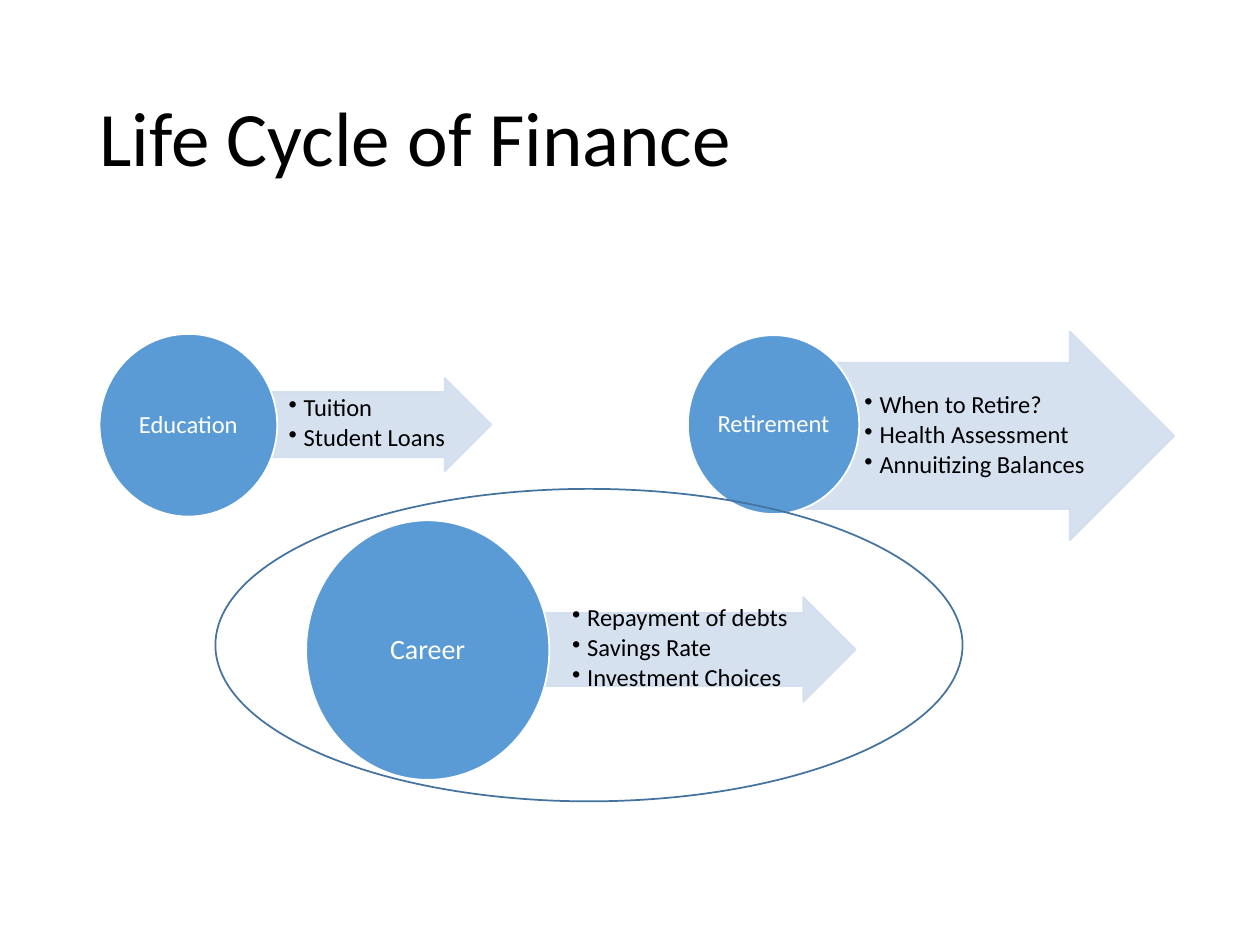
from lxml.etree import SubElement
from pptx import Presentation
from pptx.dml.color import RGBColor
from pptx.enum.shapes import MSO_SHAPE
from pptx.enum.text import MSO_ANCHOR, PP_ALIGN
from pptx.oxml.ns import qn
from pptx.util import Inches, Pt

# stage, circle text size, circle box, arrow box, bullet box, bullets
STAGES = [
    ("Education", 14, (0.79, 2.65, 1.41, 1.45), (1.7, 3, 2.2, 0.74),
     (2.25, 3.11, 1.39, 0.51), ["Tuition", "Student Loans"]),
    ("Career", 16, (2.43, 4.13, 1.93, 2.06), (3.74, 4.74, 3.05, 0.83),
     (4.5, 4.86, 2, 0.58),
     ["Repayment of debts", "Savings Rate", "Investment Choices"]),
    ("Retirement", 14, (5.46, 2.66, 1.36, 1.42), (6, 2.63, 3.32, 1.66),
     (6.82, 2.88, 1.91, 1.16),
     ["When to Retire?", "Health Assessment", "Annuitizing Balances"]),
]


def rgb(value):
    return RGBColor.from_string(value)


def inches(box):
    return [Inches(length) for length in box]


class LifeCyclePage:
    """Holds the style and the slide being built."""

    font = "Calibri"
    black, white = "000000", "FFFFFF"
    circle_blue, arrow_blue, outline_blue = "5B9BD5", "D2DEEF", "43739E"

    def __init__(self, deck):
        self.page = deck.slides.add_slide(deck.slide_layouts[5])
        background = self.page.background.fill
        background.solid()
        background.fore_color.rgb = rgb(self.white)

    def add_text(self, para, text, size, color, align=PP_ALIGN.LEFT, after=0):
        para.alignment = align
        para.line_spacing = 0.9
        para.space_after = Pt(after)
        span = para.add_run()
        span.text = text
        span.font.name = self.font
        span.font.size = Pt(size)
        span.font.color.rgb = rgb(color)

    def frame(self, shape, left, right):
        """Prepare a middle-anchored text frame with narrow margins."""
        frame = shape.text_frame
        frame.word_wrap = True
        frame.vertical_anchor = MSO_ANCHOR.MIDDLE
        frame.margin_left, frame.margin_right = Inches(left), Inches(right)
        frame.margin_top = frame.margin_bottom = Inches(0.01)
        return frame

    def title(self, text, box):
        title = self.page.shapes.title
        title.left, title.top, title.width, title.height = inches(box)
        title.text_frame.vertical_anchor = MSO_ANCHOR.MIDDLE
        self.add_text(title.text_frame.paragraphs[0], text, 44, self.black)

    def shape(self, shapes, preset, box, fill, line):
        shape = shapes.add_shape(preset, *inches(box))
        shape.shadow.inherit = False
        if fill:
            shape.fill.solid()
            shape.fill.fore_color.rgb = rgb(fill)
        else:
            shape.fill.background()
        shape.line.color.rgb = rgb(line)
        shape.line.width = Pt(1)
        return shape

    def arrow(self, shapes, box):
        arrow = self.shape(shapes, MSO_SHAPE.RIGHT_ARROW, box,
                           self.arrow_blue, self.arrow_blue)
        arrow.adjustments[0] = 0.7
        arrow.adjustments[1] = 0.5
        for color in arrow._element.spPr.iter(qn("a:srgbClr")):
            SubElement(color, qn("a:alpha"), val="90000")

    def bullets(self, shapes, box, items):
        frame = self.frame(shapes.add_textbox(*inches(box)), 0.04, 0.02)
        for index, item in enumerate(items):
            para = frame.add_paragraph() if index else frame.paragraphs[0]
            para.level = 1
            self.add_text(para, item, 14, self.black, after=2)
            properties = para._p.get_or_add_pPr()
            properties.set("marL", str(Inches(0.12)))
            properties.set("indent", str(Inches(-0.12)))
            SubElement(properties, qn("a:buChar"), char="•")

    def circle(self, shapes, box, label, size):
        circle = self.shape(shapes, MSO_SHAPE.OVAL, box,
                            self.circle_blue, self.white)
        frame = self.frame(circle, 0.01, 0.01)
        self.add_text(frame.paragraphs[0], label, size, self.white,
                      PP_ALIGN.CENTER)

    def diagram(self, stages):
        shapes = self.page.shapes.add_group_shape().shapes
        for label, size, circle_box, arrow_box, text_box, items in stages:
            self.arrow(shapes, arrow_box)
            self.bullets(shapes, text_box, items)
            self.circle(shapes, circle_box, label, size)

    def highlight(self, box):
        self.shape(self.page.shapes, MSO_SHAPE.OVAL, box, None,
                   self.outline_blue)


def main():
    deck = Presentation()
    deck.slide_width, deck.slide_height = Inches(10), Inches(7.5)
    page = LifeCyclePage(deck)
    page.title("Life Cycle of Finance", (0.69, 0.4, 8.62, 1.45))
    page.diagram(STAGES)
    page.highlight((1.71, 3.88, 5.93, 2.48))
    deck.save("out.pptx")


if __name__ == "__main__":
    main()
